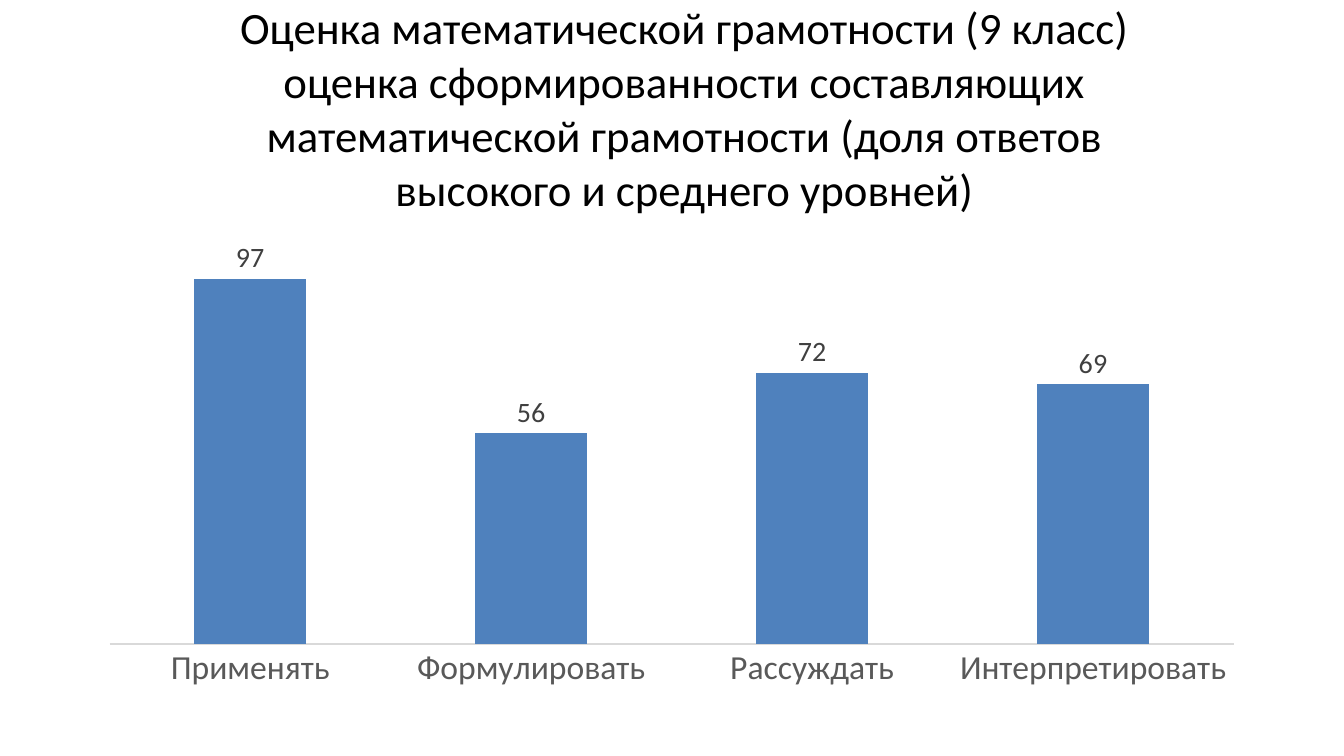
import pptx
import pptx.chart.data
import pptx.dml.color
import pptx.enum.chart
import pptx.enum.text
import pptx.oxml
import pptx.oxml.ns
import pptx.util

PX = 9525
FONT = "Calibri"
BLACK = pptx.dml.color.RGBColor(0x00, 0x00, 0x00)
LABEL_GRAY = pptx.dml.color.RGBColor(0x40, 0x40, 0x40)
AXIS_GRAY = pptx.dml.color.RGBColor(0x59, 0x59, 0x59)
LINE_GRAY = pptx.dml.color.RGBColor(0xD9, 0xD9, 0xD9)
BAR_BLUE = pptx.dml.color.RGBColor(0x4F, 0x81, 0xBD)

TITLE = (
    "Оценка математической грамотности (9 класс)\n"
    "оценка сформированности составляющих математической грамотности "
    "(доля ответов высокого и среднего уровней)"
)
SKILL_SHARES = {
    "Применять": 0.97,
    "Формулировать": 0.56,
    "Рассуждать": 0.72,
    "Интерпретировать": 0.69,
}
PLOT_AREA = {"x": 0, "y": 0.03, "w": 0.97, "h": 0.84}


def format_font(font, size, color):
    font.name = FONT
    font.size = pptx.util.Pt(size)
    font.bold = False
    font.color.rgb = color


def write_text(text_frame, text, size, color, alignment=pptx.enum.text.PP_ALIGN.CENTER):
    paragraph = text_frame.paragraphs[0]
    paragraph.text = text
    paragraph.alignment = alignment
    for run in paragraph.runs:
        format_font(run.font, size, color)


def place_title(slide, left, top, width, height):
    title = slide.shapes.title
    title.left, title.top = left * PX, top * PX
    title.width, title.height = width * PX, height * PX
    text_frame = title.text_frame
    text_frame.margin_left = text_frame.margin_right = 0
    text_frame.margin_top = text_frame.margin_bottom = 0
    text_frame.word_wrap = True
    text_frame.vertical_anchor = pptx.enum.text.MSO_ANCHOR.TOP
    text_frame.auto_size = pptx.enum.text.MSO_AUTO_SIZE.SHAPE_TO_FIT_TEXT
    write_text(text_frame, TITLE, size=32, color=BLACK)


def set_plot_layout(chart):
    positions = "".join(f'<c:{key} val="{value}"/>' for key, value in PLOT_AREA.items())
    layout = pptx.oxml.parse_xml(
        f'<c:layout {pptx.oxml.ns.nsdecls("c")}><c:manualLayout>'
        '<c:layoutTarget val="inner"/><c:xMode val="edge"/><c:yMode val="edge"/>'
        f"{positions}</c:manualLayout></c:layout>"
    )
    plot_area = chart.plots[0]._element.getparent()
    for old_layout in plot_area.findall(pptx.oxml.ns.qn("c:layout")):
        plot_area.remove(old_layout)
    plot_area.insert(0, layout)


def format_axes(chart):
    category_axis = chart.category_axis
    category_axis.major_tick_mark = pptx.enum.chart.XL_TICK_MARK.NONE
    category_axis.has_major_gridlines = False
    category_axis.format.line.color.rgb = LINE_GRAY
    category_axis.format.line.width = pptx.util.Pt(0.75)
    format_font(category_axis.tick_labels.font, 24, AXIS_GRAY)
    value_axis = chart.value_axis
    value_axis.minimum_scale = 0
    value_axis.maximum_scale = 1.2
    value_axis.has_major_gridlines = False
    value_axis.visible = False


def format_bars(plot):
    plot.gap_width = 150
    plot.overlap = -25
    plot.vary_by_categories = False
    series = plot.series[0]
    series.format.fill.solid()
    series.format.fill.fore_color.rgb = BAR_BLUE
    outside_end = pptx.enum.chart.XL_LABEL_POSITION.OUTSIDE_END
    labels = series.data_labels
    labels.show_value = True
    labels.number_format = "#,##0.00"
    labels.number_format_is_linked = False
    labels.position = outside_end
    format_font(labels.font, 20, LABEL_GRAY)
    for index, share in enumerate(SKILL_SHARES.values()):
        label = series.points[index].data_label
        write_text(label.text_frame, f"{share * 100:.0f}", size=20, color=LABEL_GRAY)
        label.position = outside_end


def place_chart(slide, left, top, width, height):
    chart_data = pptx.chart.data.CategoryChartData(number_format="#,##0.00")
    chart_data.categories = list(SKILL_SHARES)
    chart_data.add_series("Series 1", list(SKILL_SHARES.values()))
    chart = slide.shapes.add_chart(
        pptx.enum.chart.XL_CHART_TYPE.COLUMN_CLUSTERED,
        left * PX, top * PX, width * PX, height * PX, chart_data,
    ).chart
    chart.has_title = False
    chart.has_legend = False
    format_font(chart.font, 20, BLACK)
    format_axes(chart)
    format_bars(chart.plots[0])
    set_plot_layout(chart)


def main():
    presentation = pptx.Presentation()
    presentation.slide_width = 1280 * PX
    presentation.slide_height = 720 * PX
    slide = presentation.slides.add_slide(presentation.slide_layouts[5])
    place_title(slide, 208, 0, 888, 206)
    place_chart(slide, 104, 168, 1104, 512)
    presentation.save("out.pptx")


if __name__ == "__main__":
    main()
